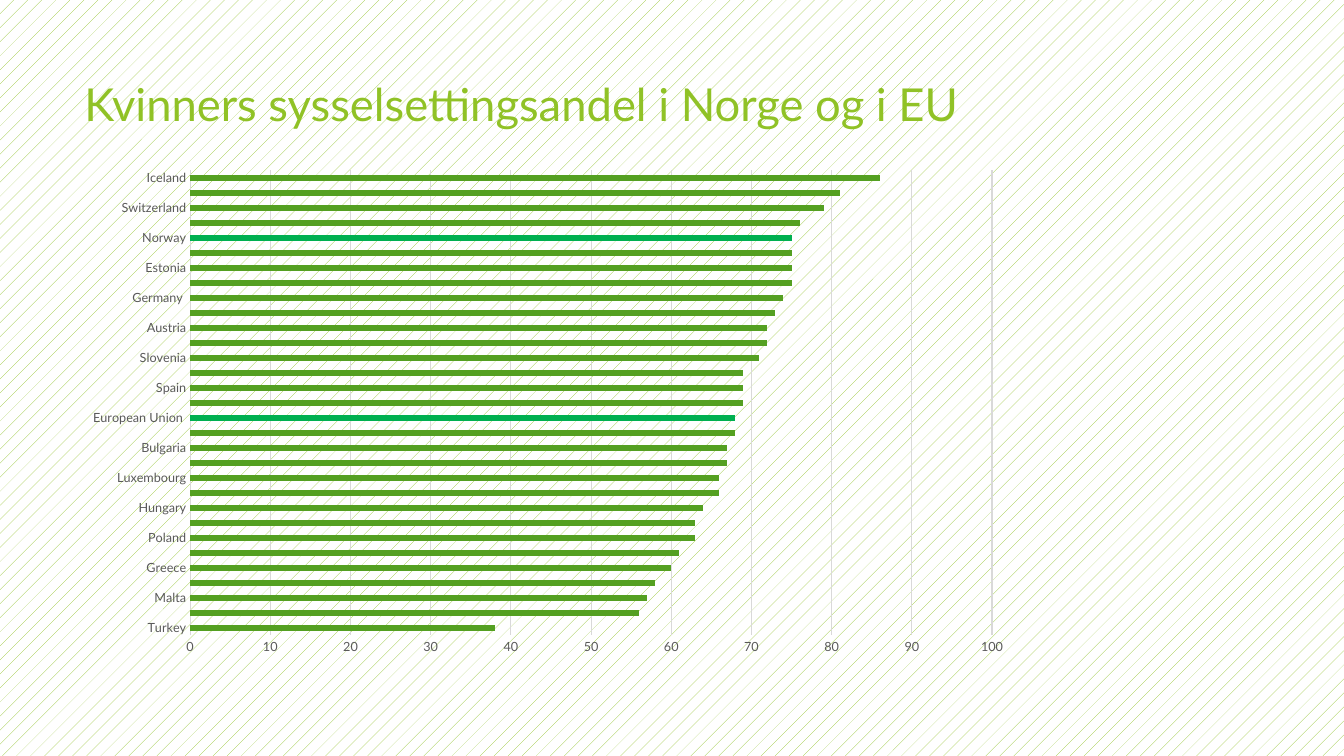
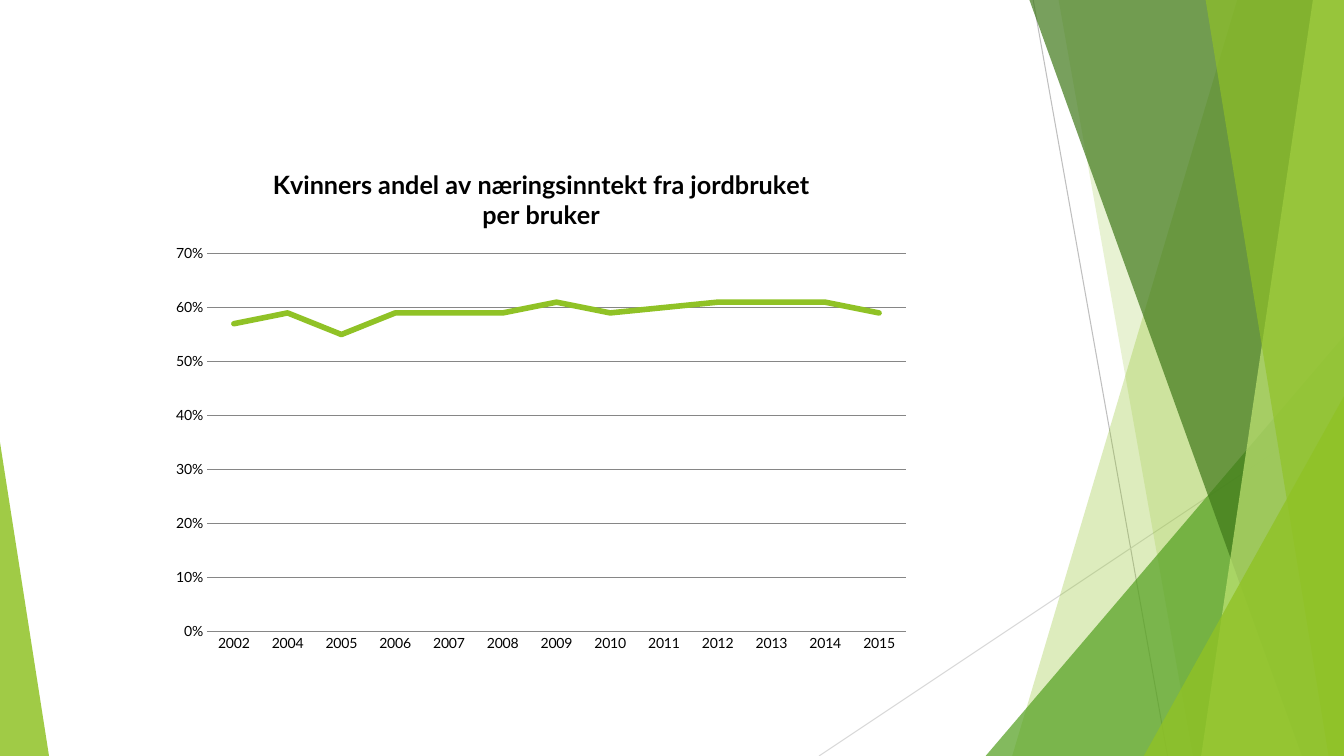
from dataclasses import dataclass

from lxml.etree import SubElement
from pptx import Presentation
from pptx.chart.data import CategoryChartData
from pptx.dml.color import RGBColor
from pptx.enum.chart import XL_CHART_TYPE, XL_TICK_MARK
from pptx.enum.dml import MSO_PATTERN
from pptx.enum.shapes import MSO_CONNECTOR, MSO_SHAPE
from pptx.enum.text import MSO_ANCHOR, MSO_AUTO_SIZE, PP_ALIGN
from pptx.oxml.ns import qn
from pptx.util import Pt


@dataclass(frozen=True)
class Theme:
    font: str = "Lato"
    lime: str = "90C226"
    green: str = "54A021"
    dark: str = "3F7819"
    pale: str = "C0E474"
    mark: str = "00B050"
    white: str = "FFFFFF"
    black: str = "000000"
    text: str = "595959"
    rule: str = "D9D9D9"
    edge: str = "BFBFBF"
    grid: str = "868686"
    title: float = 32.4
    head: float = 18
    label: float = 10
    small: float = 9
    thin: float = 0.75
    thick: float = 4


T = Theme()
WIDE, HIGH = 960, 540

RATES = {
    "Turkey": 38, "Italy": 56, "Malta": 57, "Romania": 58, "Greece": 60,
    "Croatia": 61, "Poland": 63, "Belgium": 63, "Hungary": 64,
    "Slovakia": 66, "Luxembourg": 66, "Ireland": 67, "Bulgaria": 67,
    "France": 68, "European Union ": 68, "Czech Republic": 69, "Spain": 69,
    "Cyprus": 69, "Slovenia": 71, "Portugal": 72, "Austria": 72,
    "United Kingdom": 73, "Germany ": 74, "Finland": 75, "Estonia": 75,
    "Netherlands": 75, "Norway": 75, "Denmark": 76, "Switzerland": 79,
    "Sweden": 81, "Iceland": 86,
}
SHARES = {
    "2002": 0.57, "2004": 0.59, "2005": 0.55, "2006": 0.59, "2007": 0.59,
    "2008": 0.59, "2009": 0.61, "2010": 0.59, "2011": 0.6, "2012": 0.61,
    "2013": 0.61, "2014": 0.61, "2015": 0.59,
}


# Formatting helpers
def put(item, **vals):
    for name, val in vals.items():
        setattr(item, name, val)


def rgb(code):
    return RGBColor.from_string(code)


def style(font, size, color, bold=False):
    put(font, name=T.font, size=Pt(size), bold=bold)
    font.color.rgb = rgb(color)


def stroke(line, color, width=T.thin):
    line.color.rgb = rgb(color)
    line.width = Pt(width)


def tint(shape, color, alpha):
    shape.shadow.inherit = False
    shape.line.fill.background()
    shape.fill.solid()
    shape.fill.fore_color.rgb = rgb(color)
    code = shape._element.spPr.find(qn("a:solidFill"))[0]
    SubElement(code, qn("a:alpha")).set("val", str(alpha * 1000))


# Side pattern of lines, bands and corners
def add_line(slide, x1, y1, x2, y2, color):
    line = slide.shapes.add_connector(
        MSO_CONNECTOR.STRAIGHT, Pt(x1), Pt(y1), Pt(x2), Pt(y2))
    stroke(line.line, color)
    SubElement(line._element.spPr, qn("a:effectLst"))


def add_band(slide, top, foot, color, alpha):
    """Band from a slanted left side to the right slide edge."""
    path = slide.shapes.build_freeform(Pt(top), Pt(-1))
    path.add_line_segments([(Pt(WIDE), Pt(-1)), (Pt(WIDE), Pt(HIGH)),
                            (Pt(foot), Pt(HIGH))], close=True)
    tint(path.convert_to_shape(), color, alpha)


def add_corner(slide, left, top, width, peak, color, alpha):
    """Triangle that stands on the lower slide edge."""
    shape = slide.shapes.add_shape(
        MSO_SHAPE.ISOSCELES_TRIANGLE,
        Pt(left), Pt(top), Pt(width), Pt(HIGH - top))
    shape.adjustments[0] = peak
    tint(shape, color, alpha)


def add_decor(slide):
    add_line(slide, 738, 0, 834, HIGH, T.edge)
    add_line(slide, WIDE, 290, 585, HIGH, T.rule)
    add_band(slide, 884, 723, T.lime, 30)
    add_band(slide, 756, 852, T.lime, 20)
    add_corner(slide, 704, 240, 256, 1, T.green, 72)
    add_band(slide, 735, 930, T.dark, 70)
    add_band(slide, 938, 858, T.pale, 70)
    add_band(slide, 861, 949, T.lime, 65)
    add_corner(slide, 817, 283, 143, 1, T.lime, 80)
    add_corner(slide, 0, 316, 35, 0, T.lime, 85)


# Title and background
def add_title(slide, text):
    title = slide.shapes.title
    put(title, left=Pt(53), top=Pt(48), width=Pt(677), height=Pt(52))
    frame = title.text_frame
    put(frame, text=text, word_wrap=True, auto_size=MSO_AUTO_SIZE.NONE,
        vertical_anchor=MSO_ANCHOR.MIDDLE)
    para = frame.paragraphs[0]
    para.alignment = PP_ALIGN.LEFT
    style(para.runs[0].font, T.title, T.lime)


def set_back(slide, color=None):
    fill = slide.background.fill
    if color is None:
        fill.solid()
        fill.fore_color.rgb = rgb(T.white)
        return
    fill.patterned()
    fill.pattern = MSO_PATTERN.PERCENT_5
    fill.fore_color.rgb = rgb(color)
    fill.back_color.rgb = rgb(T.white)


# Charts
def add_graph(slide, kind, box, data, form, top, step, size, ink, rule):
    feed = CategoryChartData(number_format=form)
    feed.categories = list(data)
    feed.add_series("Series 1", list(data.values()))
    chart = slide.shapes.add_chart(kind, *map(Pt, box), feed).chart
    put(chart, has_legend=False, has_title=False)
    style(chart.font, T.label, T.black)
    cat, val = chart.category_axis, chart.value_axis
    for axis in (cat, val):
        put(axis, major_tick_mark=XL_TICK_MARK.NONE,
            minor_tick_mark=XL_TICK_MARK.NONE)
        style(axis.tick_labels.font, size, ink)
    put(val, minimum_scale=0, maximum_scale=top, major_unit=step,
        has_major_gridlines=True)
    put(val.tick_labels, number_format=form, number_format_is_linked=False)
    cat.has_major_gridlines = False
    stroke(cat.format.line, rule)
    stroke(val.major_gridlines.format.line, rule)
    val.format.line.fill.background()
    plot = chart.plots[0]
    plot.vary_by_categories = False
    return chart, plot, plot.series[0]


def add_bars(slide):
    _, plot, bars = add_graph(
        slide, XL_CHART_TYPE.BAR_CLUSTERED, (53, 114, 677, 361), RATES,
        "#,##0", 100, 10, T.small, T.text, T.rule)
    plot.gap_width = 150
    names = list(RATES)
    marks = [bars.points[names.index(name)]
             for name in ("European Union ", "Norway")]
    for item, color in [(bars, T.green)] + [(m, T.mark) for m in marks]:
        item.format.fill.solid()
        item.format.fill.fore_color.rgb = rgb(color)


def add_trend(slide):
    chart, _, trend = add_graph(
        slide, XL_CHART_TYPE.LINE, (115, 106, 543, 367), SHARES,
        "0%", 0.7, 0.1, T.label, T.black, T.grid)
    trend.smooth = False
    stroke(trend.format.line, T.lime, T.thick)
    trend._element.find(qn("c:spPr")).find(qn("a:ln")).set("cap", "rnd")
    chart.has_title = True
    head = chart.chart_title
    head.include_in_layout = False
    head.text_frame.text = (
        "Kvinners andel av næringsinntekt fra jordbruket\nper bruker")
    for para in head.text_frame.paragraphs:
        style(para.runs[0].font, T.head, T.black, bold=True)


def main():
    deck = Presentation()
    put(deck, slide_width=Pt(WIDE), slide_height=Pt(HIGH))

    # Employment by country
    slide = deck.slides.add_slide(deck.slide_layouts[5])
    set_back(slide, T.lime)
    add_title(slide, "Kvinners sysselsettingsandel i Norge og i EU")
    add_bars(slide)

    # Share of farm income
    slide = deck.slides.add_slide(deck.slide_layouts[6])
    set_back(slide)
    add_decor(slide)
    add_trend(slide)

    deck.save("out.pptx")


if __name__ == "__main__":
    main()
